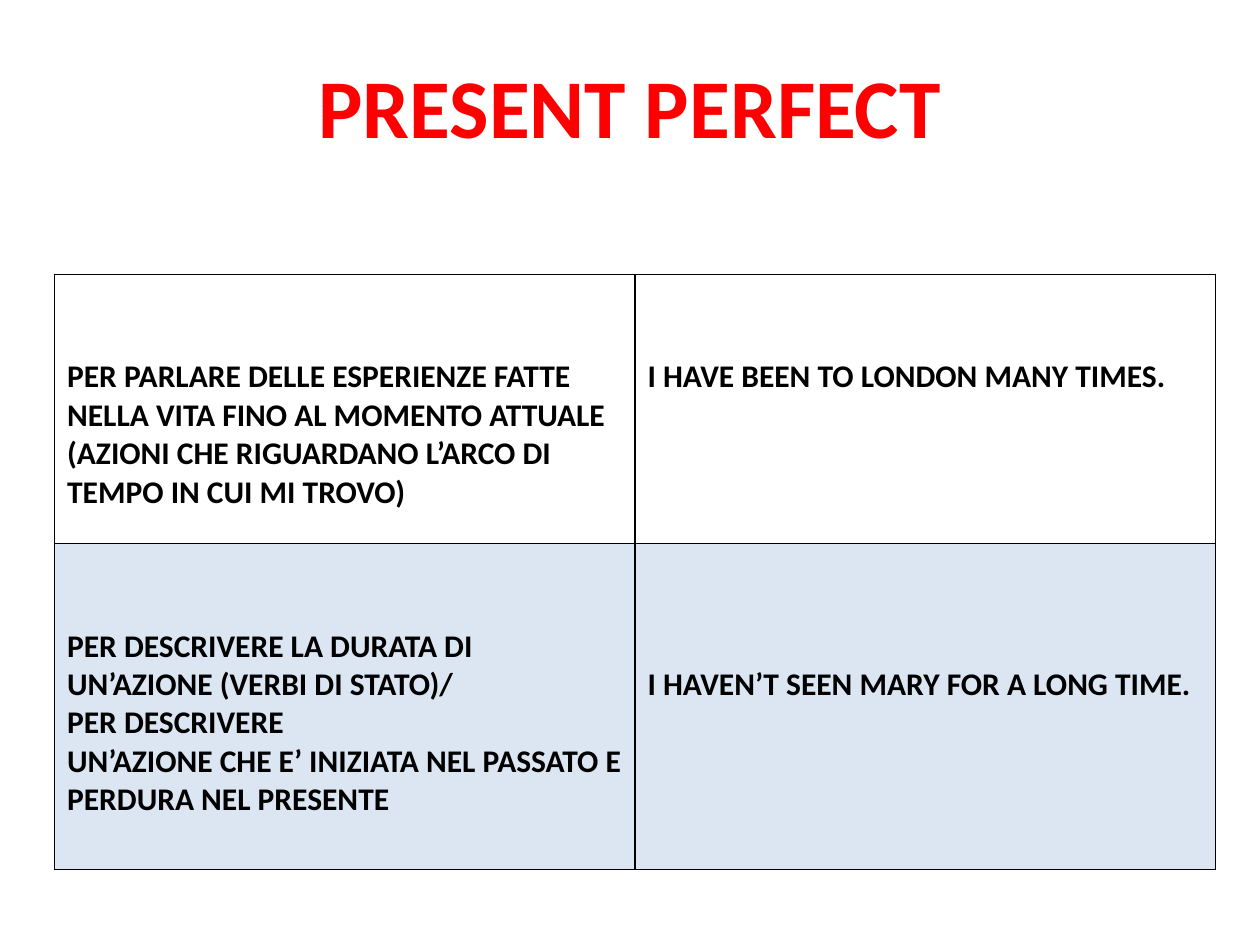
from lxml.etree import SubElement
from pptx import Presentation
from pptx.dml.color import RGBColor
from pptx.enum.text import MSO_ANCHOR as Anchor, PP_ALIGN as Align
from pptx.oxml.ns import qn
from pptx.util import Cm, Pt

TITLE = "PRESENT PERFECT"
ROWS = [
    {"height": 5.43, "fill": None, "cells": [
        (2, ["PER PARLARE DELLE ESPERIENZE FATTE NELLA VITA FINO AL MOMENTO ATTUALE "
             "(AZIONI CHE RIGUARDANO L’ARCO DI TEMPO IN CUI MI TROVO)"]),
        (2, ["I HAVE BEEN TO LONDON MANY TIMES."]),
    ]},
    {"height": 6.57, "fill": "DCE6F2", "cells": [
        (2, ["PER DESCRIVERE LA DURATA DI UN’AZIONE (VERBI DI STATO)/",
             "PER DESCRIVERE",
             "UN’AZIONE CHE E’ INIZIATA NEL PASSATO E PERDURA NEL PRESENTE"]),
        (3, ["I HAVEN’T SEEN MARY FOR A LONG TIME."]),
    ]},
]
TITLE_FORMAT = {"name": "Calibri", "size": Pt(47.7), "bold": True}
CELL_FORMAT = {"name": "Calibri", "size": Pt(18), "bold": True}
COLUMN_WIDTH = 11.7
LINE_HEIGHT = 0.775
TOP_MARGIN = 0.13


def color(value):
    return RGBColor.from_string(value)


def write(frame, lines, formats, ink, align):
    frame.word_wrap = True
    for index, line in enumerate(lines):
        para = frame.paragraphs[0] if index == 0 else frame.add_paragraph()
        para.alignment = align
        span = para.add_run()
        span.text = line
        for name, value in formats.items():
            setattr(span.font, name, value)
        span.font.color.rgb = color(ink)


def add_borders(cell):
    properties = cell._tc.get_or_add_tcPr()
    for position, side in enumerate(("a:lnL", "a:lnR", "a:lnT", "a:lnB")):
        line = properties.makeelement(qn(side), {"w": str(Pt(1))})
        fill = SubElement(line, qn("a:solidFill"))
        SubElement(fill, qn("a:srgbClr"), val="000000")
        properties.insert(position, line)


def add_title(page):
    box = page.shapes.add_textbox(Cm(1.27), Cm(1.1), Cm(22.86), Cm(2.1))
    frame = box.text_frame
    frame.margin_top = frame.margin_bottom = 0
    frame.vertical_anchor = Anchor.TOP
    write(frame, [TITLE], TITLE_FORMAT, "FF0000", Align.CENTER)


def add_uses(page):
    columns = len(ROWS[0]["cells"])
    height = sum(row["height"] for row in ROWS)
    table = page.shapes.add_table(len(ROWS), columns, Cm(1.1), Cm(5.53),
                                  Cm(columns * COLUMN_WIDTH), Cm(height)).table
    table.first_row = table.horz_banding = False
    for column in table.columns:
        column.width = Cm(COLUMN_WIDTH)
    for r, row in enumerate(ROWS):
        table.rows[r].height = Cm(row["height"])
        for c, (lines_above, lines) in enumerate(row["cells"]):
            cell = table.cell(r, c)
            cell.margin_top = Cm(TOP_MARGIN + lines_above * LINE_HEIGHT)
            write(cell.text_frame, lines, CELL_FORMAT, "000000", Align.LEFT)
            if row["fill"]:
                cell.fill.solid()
                cell.fill.fore_color.rgb = color(row["fill"])
            else:
                cell.fill.background()
            add_borders(cell)


def main():
    deck = Presentation()
    deck.slide_width, deck.slide_height = Cm(25.4), Cm(19.05)
    page = deck.slides.add_slide(deck.slide_layouts[6])
    add_title(page)
    add_uses(page)
    deck.save("out.pptx")


if __name__ == "__main__":
    main()
